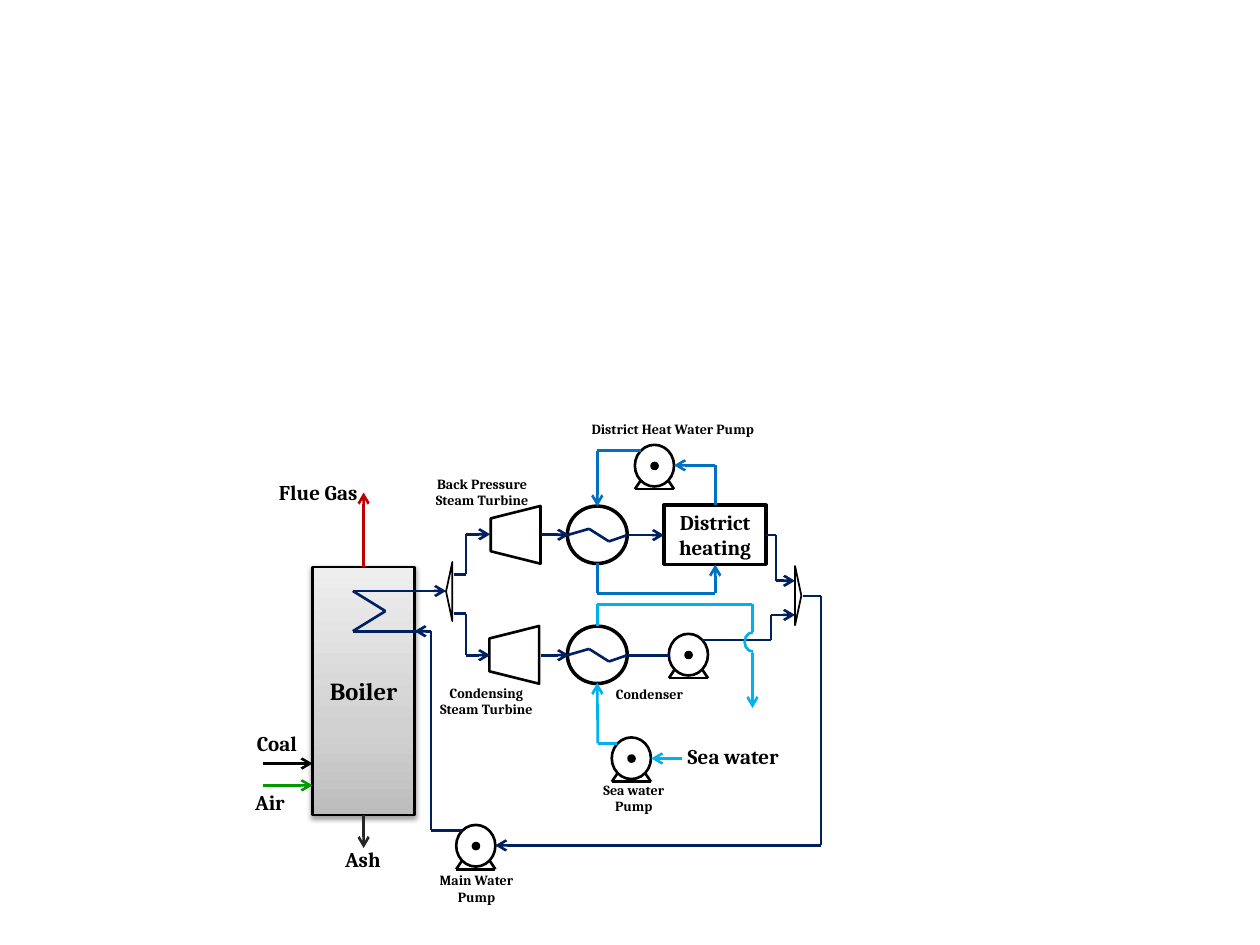
from copy import deepcopy
from dataclasses import dataclass
from itertools import pairwise

from lxml.etree import SubElement
from pptx import Presentation
from pptx.dml.color import RGBColor
from pptx.enum.shapes import MSO_CONNECTOR, MSO_SHAPE
from pptx.enum.text import MSO_ANCHOR, MSO_AUTO_SIZE, PP_ALIGN
from pptx.oxml.ns import qn
from pptx.util import Pt

INK = {
    "black": "000000", "white": "FFFFFF", "steam": "002060", "heat": "0070C0",
    "sea": "00B0F0", "air": "009900", "ash": "262626", "flue": "C00000",
}
BOILER = [("BDBDBD", 0), ("D1D1D1", 0.35), ("EEEEEE", 1)]
FONT = "Cambria"
LEFT, MID = PP_ALIGN.LEFT, PP_ALIGN.CENTER
Spot = tuple[float, float]


@dataclass
class Pipe:
    ink: str
    path_pts: list[Spot]
    arrow: bool = True


@dataclass
class Label:
    box: tuple[float, float, float, float]
    lines: list[str]
    size: int = 8
    aligns: tuple = (MID, MID)
    indent: float = 0


def color(name: str) -> RGBColor:
    return RGBColor.from_string(INK[name])


def add_line(start: Spot, end: Spot, ink: str, arrow: bool = False) -> None:
    line = slide.shapes.add_connector(
        MSO_CONNECTOR.STRAIGHT, *(Pt(n) for n in (*start, *end)))
    line.line.color.rgb = color(ink)
    line.line.width = Pt(1.5)
    props = line._element.spPr
    if arrow:
        SubElement(props.find(qn("a:ln")), qn("a:tailEnd"), type="arrow")
    SubElement(props, qn("a:effectLst"))


def add_route(pts: list[Spot], ink: str, arrow: bool = False) -> None:
    last = len(pts) - 2
    for i, (start, end) in enumerate(pairwise(pts)):
        add_line(start, end, ink, arrow and i == last)


def add_part(kind, x: float, y: float, w: float, h: float,
             width: float = 1.5, turn: float = 0, fill: str = "white"):
    part = slide.shapes.add_shape(kind, Pt(x), Pt(y), Pt(w), Pt(h))
    part.shadow.inherit = False
    part.rotation = turn
    part.fill.solid()
    part.fill.fore_color.rgb = color(fill)
    part.line.color.rgb = color("black")
    part.line.width = Pt(width)
    return part


def add_text(para, text: str, size: int, align) -> None:
    para.alignment = align
    run = para.add_run()
    run.text = text
    run.font.name, run.font.size, run.font.bold = FONT, Pt(size), True
    run.font.color.rgb = color("black")


def add_block(box, text: str, size: int, width: float):
    part = add_part(MSO_SHAPE.RECTANGLE, *box, width)
    part.text_frame.vertical_anchor = MSO_ANCHOR.MIDDLE
    part.text_frame.word_wrap = True
    add_text(part.text_frame.paragraphs[0], text, size, MID)
    return part


def add_pump(x: float, y: float) -> None:
    add_part(MSO_SHAPE.OVAL, x, y, 22.4, 23.8)
    feet = [(3.4, 20.3), (0, 25.3), (22.4, 25.3), (19, 20.3)]
    add_route([(x + a, y + b) for a, b in feet], "black")
    add_part(MSO_SHAPE.FLOWCHART_CONNECTOR, x + 9.6, y + 10.4, 3.4, 3.4,
             fill="black")


def add_cooler(x: float, y: float) -> None:
    add_part(MSO_SHAPE.OVAL, x, y, 34.2, 32.8, 2)
    bends = [(0, 16.6), (12.4, 13), (23.8, 20.2), (34.2, 16.6)]
    add_route([(x + a, y + b) for a, b in bends], "steam")


def add_label(label: Label) -> None:
    frame = slide.shapes.add_textbox(*(Pt(n) for n in label.box)).text_frame
    frame.word_wrap = False
    frame.auto_size = MSO_AUTO_SIZE.SHAPE_TO_FIT_TEXT
    for i, (text, align) in enumerate(zip(label.lines, label.aligns)):
        para = frame.add_paragraph() if i else frame.paragraphs[0]
        add_text(para, text, label.size, align)
        if label.indent:
            para._p.get_or_add_pPr().set("marL", str(Pt(label.indent)))


deck = Presentation()
deck.slide_width, deck.slide_height = Pt(720), Pt(540)
slide = deck.slides.add_slide(deck.slide_layouts[6])

# Boiler with gradient and soft shadow
boiler = add_block((178.6, 324, 58.4, 141.8), "Boiler", 14, 1.5)
boiler.fill.gradient()
boiler.fill.gradient_angle = 90
props = boiler._element.spPr
stops = props.find(".//" + qn("a:gsLst"))
stops.append(deepcopy(stops[0]))
for stop, (tone, place) in zip(boiler.fill.gradient_stops, BOILER):
    stop.color.rgb = RGBColor.from_string(tone)
    stop.position = place
shade = SubElement(props.find(qn("a:effectLst")), qn("a:outerShdw"),
                   blurRad=str(Pt(3.1)), dist=str(Pt(1.6)), dir="5400000",
                   rotWithShape="0")
tint = SubElement(shade, qn("a:srgbClr"), val=INK["black"])
SubElement(tint, qn("a:alpha"), val="38000")

# Splitter, mixer, turbines and district heating
for x, y, turn in [(239.8, 336.2, 270), (439.2, 338.6, 90)]:
    add_part(MSO_SHAPE.ISOSCELES_TRIANGLE, x, y, 33.8, 3.6, 1, turn)
for x, y in [(278.2, 291.4), (277.4, 360)]:
    add_part(MSO_SHAPE.TRAPEZOID, x, y, 33, 28.4, 1.5, 270)
add_block((379.4, 288.7, 58.4, 33.8), "District heating", 12, 2)

# Heat exchangers and pumps
for y in (289.2, 357.8):
    add_cooler(324.2, y)
for spot in [(260.7, 471.4), (362.8, 254.2), (349.6, 421.4), (382.2, 362.2)]:
    add_pump(*spot)

# Pipes
PIPES = [
    Pipe("steam", [(239.8, 360.7), (201.6, 360.7), (220.3, 349.2),
                   (201.6, 337.7), (239.8, 337.7)], False),
    Pipe("steam", [(238.3, 337.7), (254.9, 337.7)]),
    Pipe("steam", [(259.2, 328.3), (266.4, 328.3), (266.4, 305.3), (280.1, 305.3)]),
    Pipe("steam", [(259.2, 350.6), (266.4, 350.6), (266.4, 374.4), (280.1, 374.4)]),
    Pipe("steam", [(308.9, 305.6), (325.2, 305.6)]),
    Pipe("steam", [(308.9, 374.4), (325.2, 374.4)]),
    Pipe("steam", [(358.6, 305.8), (379.4, 305.8)]),
    Pipe("steam", [(437.8, 305.8), (443.5, 305.8), (443.5, 331.9), (454.3, 331.9)]),
    Pipe("steam", [(358.6, 374.4), (382.3, 374.4)], False),
    Pipe("steam", [(401, 365.8), (440.6, 365.8), (440.6, 351.4), (454.3, 351.4)]),
    Pipe("steam", [(458.6, 340.6), (469.2, 340.6), (469.2, 483.1), (283, 483.1)]),
    Pipe("steam", [(264.2, 474.5), (246.2, 474.5), (246.2, 360.7), (236.9, 360.7)]),
    Pipe("heat", [(341.3, 321.8), (341.3, 339.1), (408.7, 339.1), (408.7, 322.6)]),
    Pipe("heat", [(408.7, 288.7), (408.7, 265.9), (385.2, 265.9)]),
    Pipe("heat", [(366.5, 257.6), (341.3, 257.6), (341.3, 289.4)]),
    Pipe("sea", [(389.5, 433.4), (372.2, 433.4)]),
    Pipe("sea", [(352.8, 424.8), (341.6, 424.8), (341.3, 390.2)]),
    Pipe("sea", [(341.3, 357.8), (341.3, 345.4), (430, 345.4), (430, 361.4)], False),
    Pipe("sea", [(430, 373), (430, 404.6)]),
    Pipe("black", [(150.5, 436.3), (178.6, 436.3)]),
    Pipe("air", [(150.5, 448.8), (178.6, 448.8)]),
    Pipe("ash", [(207.8, 465.8), (207.8, 484.6)]),
    Pipe("flue", [(207.8, 324), (207.8, 281.5)]),
]
for pipe in PIPES:
    add_route(pipe.path_pts, pipe.ink, pipe.arrow)

# Hop of the sea water over the steam pipe
hop = add_part(MSO_SHAPE.ARC, 425.5, 361.4, 9.4, 11)
hop.fill.background()
hop.line.color.rgb = color("sea")
hop.adjustments[0], hop.adjustments[1] = 53.1, 162

# Labels
SIDE = (LEFT, MID)
LABELS = [
    Label((139.7, 414, 38.9, 21.8), ["Coal"], 12, SIDE),
    Label((138.7, 447.4, 31.7, 21.8), ["Air"], 12, SIDE),
    Label((154.1, 480.2, 71.3, 21.8), ["Ash"], 12, SIDE, 36),
    Label((208.1, 494.6, 94.3, 26.6), ["Main Water", "Pump"], 8, SIDE, 36),
    Label((301.7, 442.8, 89.3, 26.6), ["Sea water", "Pump"], 8, SIDE, 36),
    Label((349.9, 421.4, 105.1, 21.8), ["Sea water"], 12, SIDE, 36),
    Label((308.9, 388.1, 90.7, 17), ["Condenser"], 8, SIDE, 36),
    Label((243.4, 387.4, 69.1, 26.6), ["Condensing", "Steam Turbine"]),
    Label((329.8, 236.9, 109.4, 17), ["District Heat Water Pump"]),
    Label((151.2, 270.7, 61.2, 21.8), ["Flue Gas"], 12),
    Label((241, 268, 69.1, 26.6), ["Back Pressure", "Steam Turbine"]),
]
for label in LABELS:
    add_label(label)

deck.save("out.pptx")
